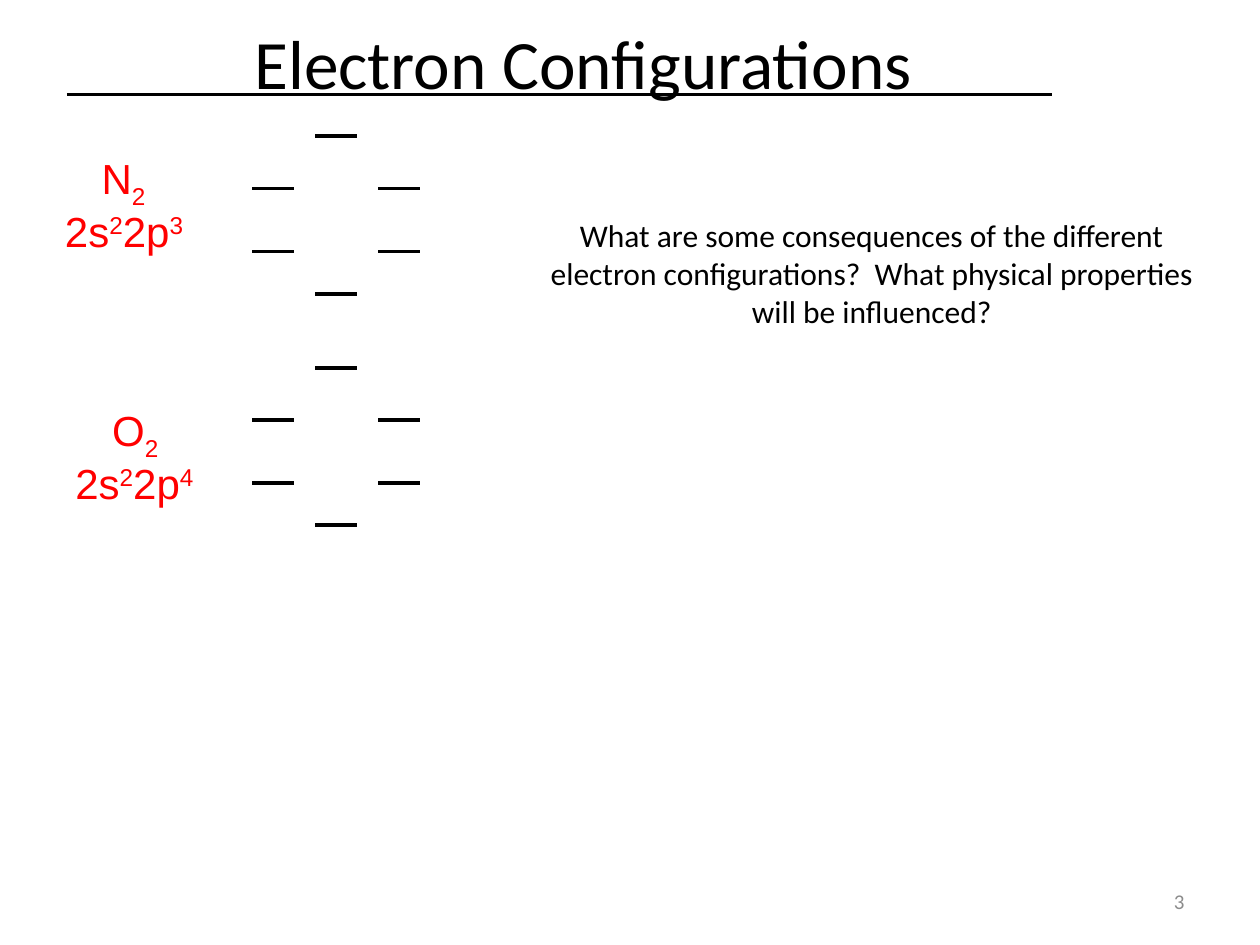
from lxml.etree import SubElement
from pptx import Presentation
from pptx.dml.color import RGBColor
from pptx.enum.shapes import MSO_CONNECTOR
from pptx.enum.text import MSO_ANCHOR, MSO_AUTO_SIZE, PP_ALIGN
from pptx.oxml.ns import qn
from pptx.util import Cm, Pt

BLACK, RED, GREY, WHITE = "000000", "FF0000", "8C8C8C", "FFFFFF"
SUBSCRIPT, SUPERSCRIPT = -25000, 30000
LEVEL_WIDTH = 0.85
LEFT, MIDDLE, RIGHT = 5.08, 6.35, 7.62
ORBITALS = [
    (MIDDLE, 0), (LEFT, 1.06), (RIGHT, 1.06),
    (LEFT, 2.33), (RIGHT, 2.33), (MIDDLE, 3.18),
]


def color(hex_string):
    return RGBColor.from_string(hex_string)


def add_run(paragraph, text, size, font, hex_string, baseline=0):
    run = paragraph.add_run()
    run.text = text
    run.font.size = Pt(size)
    run.font.name = font
    run.font.color.rgb = color(hex_string)
    if baseline:
        run.font._element.set("baseline", str(baseline))


def add_label(slide, box, runs, size, font, hex_string,
              align=PP_ALIGN.LEFT, wrap=True, anchor=MSO_ANCHOR.TOP):
    label = slide.shapes.add_textbox(*map(Cm, box))
    frame = label.text_frame
    frame.word_wrap = wrap
    frame.vertical_anchor = anchor
    paragraph = frame.paragraphs[0]
    paragraph.alignment = align
    for text, baseline in runs:
        add_run(paragraph, text, size, font, hex_string, baseline)
    return label


def add_rule(slide, left, top, width, weight):
    rule = slide.shapes.add_connector(
        MSO_CONNECTOR.STRAIGHT, Cm(left), Cm(top), Cm(left + width), Cm(top))
    rule.line.color.rgb = color(BLACK)
    rule.line.width = Pt(weight)
    SubElement(rule._element.spPr, qn("a:effectLst"))


def add_title(slide, text):
    title = slide.shapes.title
    title.left, title.top, title.width, title.height = map(
        Cm, (1.06, 0.71, 21.39, 1.09))
    title.fill.solid()
    title.fill.fore_color.rgb = color(WHITE)
    frame = title.text_frame
    frame.auto_size = MSO_AUTO_SIZE.NONE
    frame.vertical_anchor = MSO_ANCHOR.MIDDLE
    frame.paragraphs[0].alignment = PP_ALIGN.CENTER
    add_run(frame.paragraphs[0], text, 39.6, "Calibri", BLACK)


def add_molecule(slide, element, p_electrons, left, top, levels_top):
    formula = [(element, 0), ("2", SUBSCRIPT)]
    configuration = [("2s", 0), ("2", SUPERSCRIPT),
                     ("2p", 0), (p_electrons, SUPERSCRIPT)]
    for box, runs in (
        ((left + 0.74, top, 1.47, 1.27), formula),
        ((left, top + 1.06, 3, 1.27), configuration),
    ):
        label = add_label(slide, box, runs, 24, "Arial", RED, wrap=False)
        label.text_frame.auto_size = MSO_AUTO_SIZE.SHAPE_TO_FIT_TEXT
    for level_left, drop in ORBITALS:
        add_rule(slide, level_left, levels_top + drop, LEVEL_WIDTH, 2.25)


def main():
    presentation = Presentation()
    presentation.slide_width, presentation.slide_height = Cm(25.4), Cm(19.05)
    slide = presentation.slides.add_slide(presentation.slide_layouts[5])
    add_title(slide, "Electron Configurations")
    add_rule(slide, 1.35, 1.9, 19.86, 1.5)
    add_label(slide, (18.21, 17.65, 5.92, 1.02), [("3", 0)], 12, "Calibri",
              GREY, PP_ALIGN.RIGHT, anchor=MSO_ANCHOR.MIDDLE)
    add_molecule(slide, "N", "3", 1.06, 2.95, 2.74)
    add_molecule(slide, "O", "4", 1.27, 8.03, 7.41)
    question = ("What are some consequences of the different electron "
                "configurations?  What physical properties will be influenced?")
    add_label(slide, (10.59, 4.24, 13.97, 2.57), [(question, 0)], 18,
              "Calibri", BLACK, PP_ALIGN.CENTER)
    presentation.save("out.pptx")


main()
